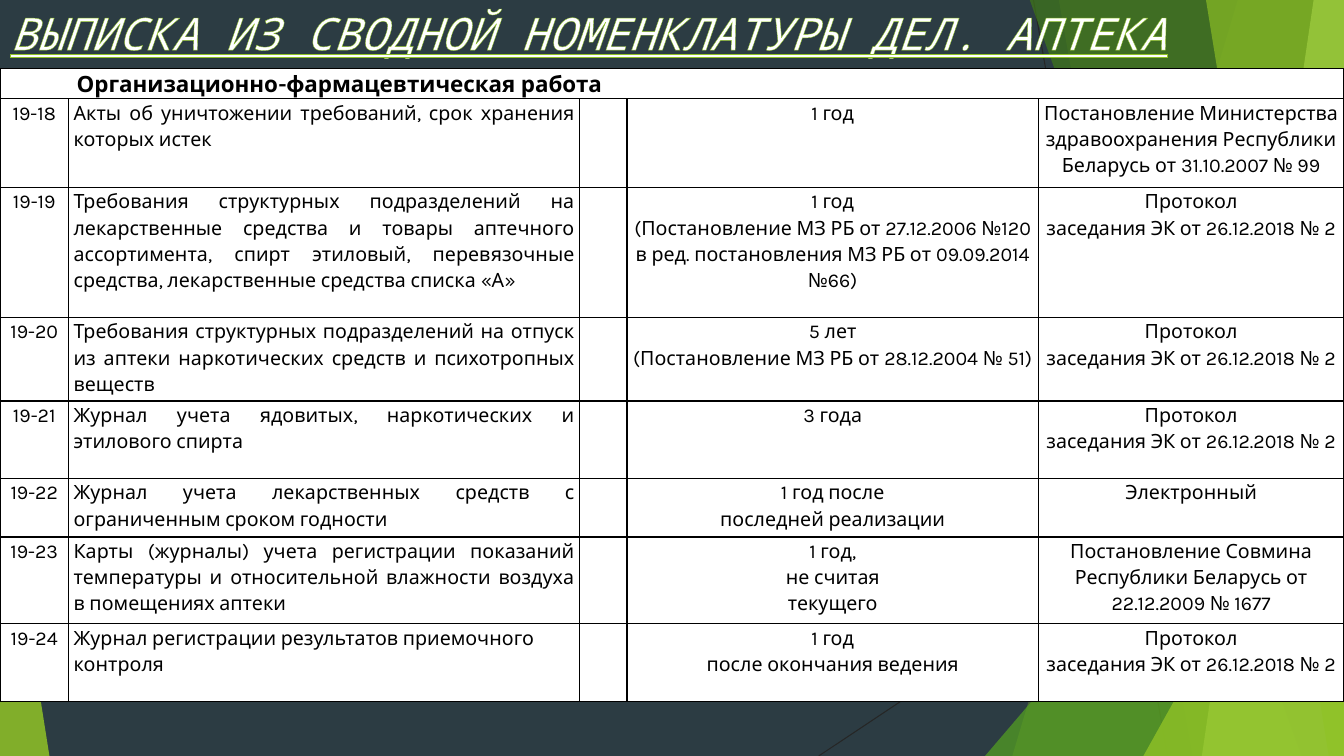
from lxml import etree
from pptx import Presentation
from pptx.dml.color import RGBColor
from pptx.enum.shapes import MSO_CONNECTOR, MSO_SHAPE
from pptx.enum.text import MSO_ANCHOR, PP_ALIGN
from pptx.oxml.ns import qn
from pptx.util import Inches, Pt

STRAIGHT = MSO_CONNECTOR.STRAIGHT
TRIANGLE = MSO_SHAPE.ISOSCELES_TRIANGLE
MIDDLE = MSO_ANCHOR.MIDDLE
LEFT, CENTER, JUSTIFY = PP_ALIGN.LEFT, PP_ALIGN.CENTER, PP_ALIGN.JUSTIFY

WIDTH, HEIGHT = 13.33, 7.5
FACET_TOP = -0.01
HEADING = "ВЫПИСКА ИЗ СВОДНОЙ НОМЕНКЛАТУРЫ ДЕЛ. АПТЕКА"
SECTION = "Организационно-фармацевтическая работа"
PROTOCOL = "Протокол\nзаседания ЭК от 26.12.2018 № 2"

# Index, case title, retention period, basis; a line feed starts a paragraph
CASES = [
    ("19-18", "Акты об уничтожении требований, срок хранения которых истек",
     "1 год",
     "Постановление Министерства здравоохранения Республики Беларусь от 31.10.2007 № 99"),
    ("19-19", "Требования структурных подразделений на лекарственные средства и товары "
     "аптечного ассортимента, спирт этиловый, перевязочные средства, "
     "лекарственные средства списка «А»",
     "1 год\n(Постановление МЗ РБ от 27.12.2006 №120 "
     "в ред. постановления МЗ РБ от 09.09.2014 №66)", PROTOCOL),
    ("19-20", "Требования структурных подразделений на отпуск из аптеки "
     "наркотических средств и психотропных веществ",
     "5 лет\n(Постановление МЗ РБ от 28.12.2004 № 51)", PROTOCOL),
    ("19-21", "Журнал учета ядовитых, наркотических и этилового спирта",
     "3 года", PROTOCOL),
    ("19-22", "Журнал учета лекарственных средств с ограниченным сроком годности",
     "1 год после\nпоследней реализации", "Электронный"),
    ("19-23", "Карты (журналы) учета регистрации показаний температуры и "
     "относительной влажности воздуха в помещениях аптеки",
     "1 год,\nне считая\nтекущего",
     "Постановление Совмина Республики Беларусь от 22.12.2009 № 1677"),
    ("19-24", "Журнал регистрации результатов приемочного контроля",
     "1 год\nпосле окончания ведения", PROTOCOL),
]
COLUMN_WIDTHS = [0.68, 5.07, 0.47, 4.08, 3.03]
ROW_HEIGHTS = [0.29, 0.88, 1.29, 0.83, 0.77, 0.58, 0.86, 0.77]


def rgb(color):
    return RGBColor.from_string(color)


def outline(parent, tag, color, points):
    """Return a new solid line element under parent."""
    line = etree.SubElement(parent, qn(tag), w=str(Pt(points)))
    fill = etree.SubElement(line, qn("a:solidFill"))
    etree.SubElement(fill, qn("a:srgbClr"), val=color)
    return line


class NomenclatureSlide:
    heading_font = "Noto Sans Mono"
    table_font = "Karla"
    ink = "000000"
    paper = "FFFFFF"
    accent = "90C226"

    def __init__(self, deck, background):
        self.slide = deck.slides.add_slide(deck.slide_layouts[5])
        self.shapes = self.slide.shapes
        fill = self.slide.background.fill
        fill.solid()
        fill.fore_color.rgb = rgb(background)

    def ray(self, x1, y1, x2, y2):
        ray = self.shapes.add_connector(
            STRAIGHT, Inches(x1), Inches(y1), Inches(x2), Inches(y2))
        ray.line.color.rgb = rgb("262626")
        ray.line.width = Pt(0.75)
        etree.SubElement(ray._element.spPr, qn("a:effectLst"))

    def paint(self, shape, color, opacity):
        shape.shadow.inherit = False
        shape.line.fill.background()
        shape.fill.solid()
        shape.fill.fore_color.rgb = rgb(color)
        tint = shape._element.spPr.find(f".//{qn('a:srgbClr')}")
        etree.SubElement(tint, qn("a:alpha"), val=str(opacity * 1000))

    def facet(self, top_x, bottom_x, color, opacity):
        """Fill from a slanted edge to the right side of the slide."""
        builder = self.shapes.build_freeform(Inches(top_x), Inches(FACET_TOP))
        corners = [(WIDTH, FACET_TOP), (WIDTH, HEIGHT), (bottom_x, HEIGHT)]
        builder.add_line_segments([(Inches(x), Inches(y)) for x, y in corners])
        self.paint(builder.convert_to_shape(), color, opacity)

    def corner(self, left, top, width, apex, color, opacity):
        """Add a triangle standing on the bottom edge of the slide."""
        corner = self.shapes.add_shape(
            TRIANGLE, Inches(left), Inches(top), Inches(width), Inches(HEIGHT - top))
        corner.adjustments[0] = apex
        self.paint(corner, color, opacity)

    def add_text(self, paragraph, text, size, font, color, bold=False):
        run = paragraph.add_run()
        run.text = text
        run.font.size = Pt(size)
        run.font.name = font
        run.font.bold = bold
        run.font.color.rgb = rgb(color)
        return run

    def heading(self, text):
        title = self.shapes.title
        title.left, title.top = Inches(0), Inches(0)
        title.width, title.height = Inches(12.03), Inches(0.64)
        frame = title.text_frame
        frame.word_wrap = True
        frame.vertical_anchor = MIDDLE
        paragraph = frame.paragraphs[0]
        paragraph.alignment = LEFT
        run = self.add_text(paragraph, text, 32, self.heading_font, self.paper)
        run.font.italic = run.font.underline = True
        properties = run._r.get_or_add_rPr()
        properties.insert(0, outline(properties, "a:ln", self.accent, 0.8))
        self.shapes._spTree.append(title._element)  # in front of the facets

    def cell(self, cell, text="", align=CENTER, size=14, bold=False, indent=0):
        cell.margin_left = cell.margin_right = Inches(0.05)
        cell.margin_top = cell.margin_bottom = Inches(0)
        cell.fill.solid()
        cell.fill.fore_color.rgb = rgb(self.paper)
        properties = cell._tc.get_or_add_tcPr()
        for place, side in enumerate("LRTB"):
            properties.insert(place, outline(properties, f"a:ln{side}", self.ink, 1))
        if not text:
            return
        for number, line in enumerate(text.split("\n")):
            frame = cell.text_frame
            paragraph = frame.add_paragraph() if number else frame.paragraphs[0]
            paragraph.alignment = align
            paragraph.line_spacing = 1.15
            if indent:
                paragraph._p.get_or_add_pPr().set("indent", str(Inches(indent)))
            self.add_text(paragraph, line, size, self.table_font, self.ink, bold)

    def nomenclature(self, section, cases):
        table = self.shapes.add_table(
            len(ROW_HEIGHTS), len(COLUMN_WIDTHS), Inches(0), Inches(0.68),
            Inches(WIDTH), Inches(sum(ROW_HEIGHTS))).table
        table.first_row = table.horz_banding = False
        for column, width in zip(table.columns, COLUMN_WIDTHS):
            column.width = Inches(width)
        for row, height in zip(table.rows, ROW_HEIGHTS):
            row.height = Inches(height)

        table.cell(0, 0).merge(table.cell(0, len(COLUMN_WIDTHS) - 1))
        section_cell, *spanned = table.rows[0].cells
        self.cell(section_cell, section, LEFT, size=16, bold=True, indent=0.71)
        for blank in spanned:
            self.cell(blank)

        for number, (index, name, period, basis) in enumerate(cases, start=1):
            name_align = LEFT if number == len(cases) else JUSTIFY
            aligns = [CENTER, name_align, CENTER, CENTER, CENTER]
            texts = [index, name, "", period, basis]
            for cell, text, align in zip(table.rows[number].cells, texts, aligns):
                self.cell(cell, text, align)


def main():
    deck = Presentation()
    deck.slide_width, deck.slide_height = Inches(WIDTH), Inches(HEIGHT)
    page = NomenclatureSlide(deck, "2C3C43")
    page.ray(10.25, 0, 11.58, HEIGHT)
    page.ray(WIDTH, 4.03, 8.12, HEIGHT)
    page.facet(12.28, 10.04, "90C226", 30)
    page.facet(10.5, 11.83, "90C226", 20)
    page.corner(9.77, 3.33, 3.56, 1, "54A021", 72)
    page.facet(10.21, 12.91, "3F7819", 70)
    page.facet(13.03, 11.92, "C0E474", 70)
    page.facet(11.96, 13.18, "90C226", 65)
    page.corner(11.34, 3.93, 1.99, 1, "90C226", 80)
    page.corner(0, 4.39, 0.49, 0, "90C226", 85)
    page.nomenclature(SECTION, CASES)
    page.heading(HEADING)
    deck.save("out.pptx")


if __name__ == "__main__":
    main()
